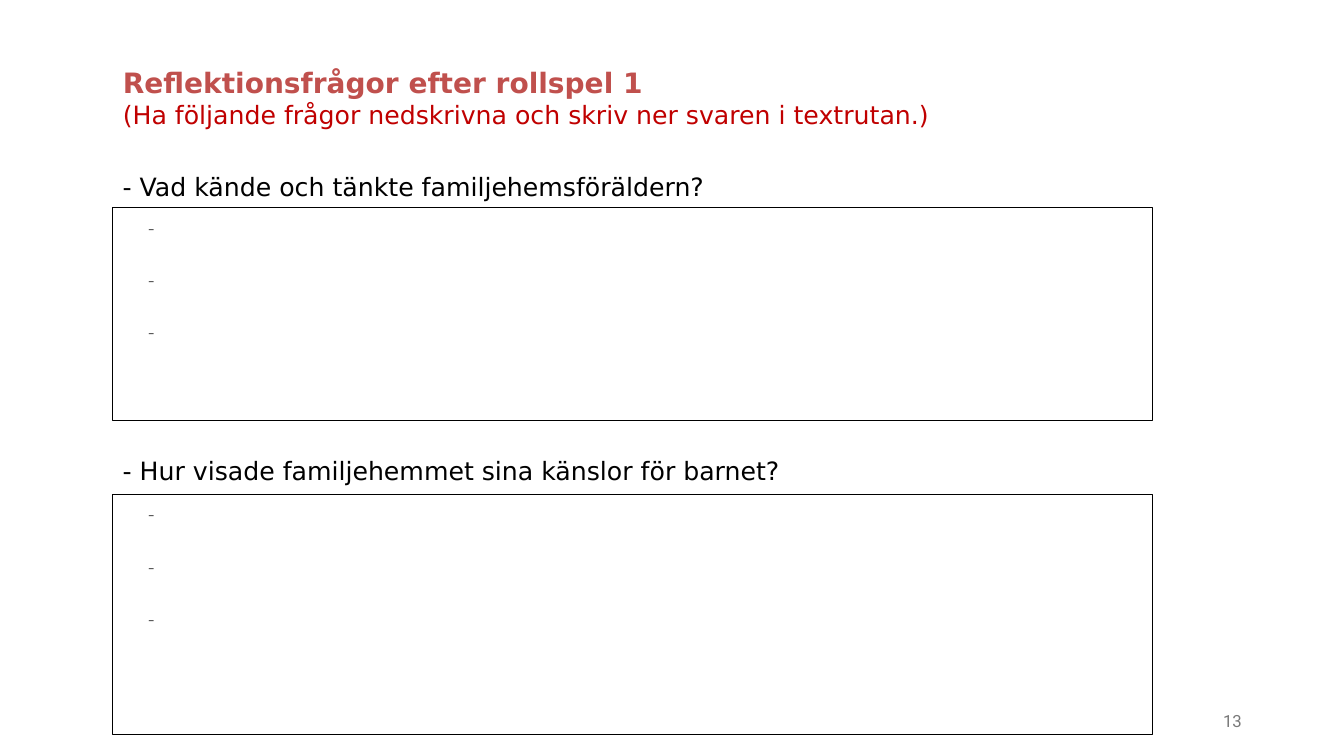
import pptx
import pptx.dml.color
import pptx.enum.text
import pptx.oxml.ns
import pptx.util
from lxml import etree
from pptx.util import Cm

COLORS = {
    "heading": "C0504D",
    "instruction": "C00000",
    "question": "000000",
    "answer": "595959",
    "number": "797979",
    "box_fill": "FFFFFF",
    "box_line": "000000",
}
ALIGN = pptx.enum.text.PP_ALIGN
ANCHOR = pptx.enum.text.MSO_ANCHOR
LEFT = Cm(2.84)
ANSWER_WIDTH = Cm(26.21)
ANSWER_COUNT = 3


def color(name):
    return pptx.dml.color.RGBColor.from_string(COLORS[name])


def place(shape, left, top, width, height):
    shape.left, shape.top, shape.width, shape.height = left, top, width, height


def prepare_frame(shape, anchor=ANCHOR.TOP):
    frame = shape.text_frame
    frame.word_wrap = True
    frame.auto_size = pptx.enum.text.MSO_AUTO_SIZE.NONE
    frame.vertical_anchor = anchor
    return frame


def write(paragraph, text, *, size, ink, font="DejaVu Sans", bold=False,
          align=ALIGN.LEFT, before=0, after=0, spacing=1.0):
    paragraph.alignment = align
    paragraph.space_before = pptx.util.Pt(before)
    paragraph.space_after = pptx.util.Pt(after)
    paragraph.line_spacing = spacing
    run = paragraph.add_run()
    run.text = text
    run.font.name = font
    run.font.size = pptx.util.Pt(size)
    run.font.bold = bold
    run.font.color.rgb = color(ink)


def hang_dash(paragraph):
    """Give a typed dash a hanging indent and no automatic bullet."""
    properties = paragraph._p.get_or_add_pPr()
    properties.set("marL", str(Cm(1.27)))
    properties.set("indent", str(-Cm(0.635)))
    etree.SubElement(properties, pptx.oxml.ns.qn("a:buNone"))


def fill_title(title):
    place(title, LEFT, Cm(1.52), Cm(28.68), Cm(1.88))
    frame = prepare_frame(title)
    write(frame.paragraphs[0], "Reflektionsfrågor efter rollspel 1",
          size=20, ink="heading", bold=True)
    write(frame.add_paragraph(),
          "(Ha följande frågor nedskrivna och skriv ner svaren i textrutan.)",
          size=18, ink="instruction")


def add_question(slide, text, top, width):
    question = slide.shapes.add_textbox(LEFT, top, width, Cm(1.02))
    write(prepare_frame(question).paragraphs[0], text, size=18, ink="question")


def fill_answers(answers, top, height):
    place(answers, LEFT, top, ANSWER_WIDTH, height)
    answers.fill.solid()
    answers.fill.fore_color.rgb = color("box_fill")
    answers.line.color.rgb = color("box_line")
    answers.line.width = pptx.util.Pt(0.75)
    frame = prepare_frame(answers)
    for index in range(ANSWER_COUNT):
        paragraph = frame.add_paragraph() if index else frame.paragraphs[0]
        write(paragraph, "-", size=15, ink="answer", font="Cambria",
              before=12, after=6, spacing=1.07)
        hang_dash(paragraph)


def add_page_number(slide, number):
    page = slide.shapes.add_textbox(Cm(23.93), Cm(17.65), Cm(7.62), Cm(1.02))
    write(prepare_frame(page, ANCHOR.MIDDLE).paragraphs[0], number,
          size=12, ink="number", font="Roboto", align=ALIGN.RIGHT)


def main():
    presentation = pptx.Presentation()
    presentation.slide_width = Cm(33.87)
    presentation.slide_height = Cm(19.05)
    two_content = presentation.slide_layouts[3]
    slide = presentation.slides.add_slide(two_content)
    title, feelings, expression = slide.placeholders

    fill_title(title)
    add_question(slide, "- Vad kände och tänkte familjehemsföräldern?",
                 Cm(4.19), Cm(16.94))
    fill_answers(feelings, Cm(5.23), Cm(5.37))
    add_question(slide, "- Hur visade familjehemmet sina känslor för barnet?",
                 Cm(11.35), Cm(18.85))
    fill_answers(expression, Cm(12.45), Cm(6.05))
    add_page_number(slide, "13")
    presentation.save("out.pptx")


if __name__ == "__main__":
    main()
